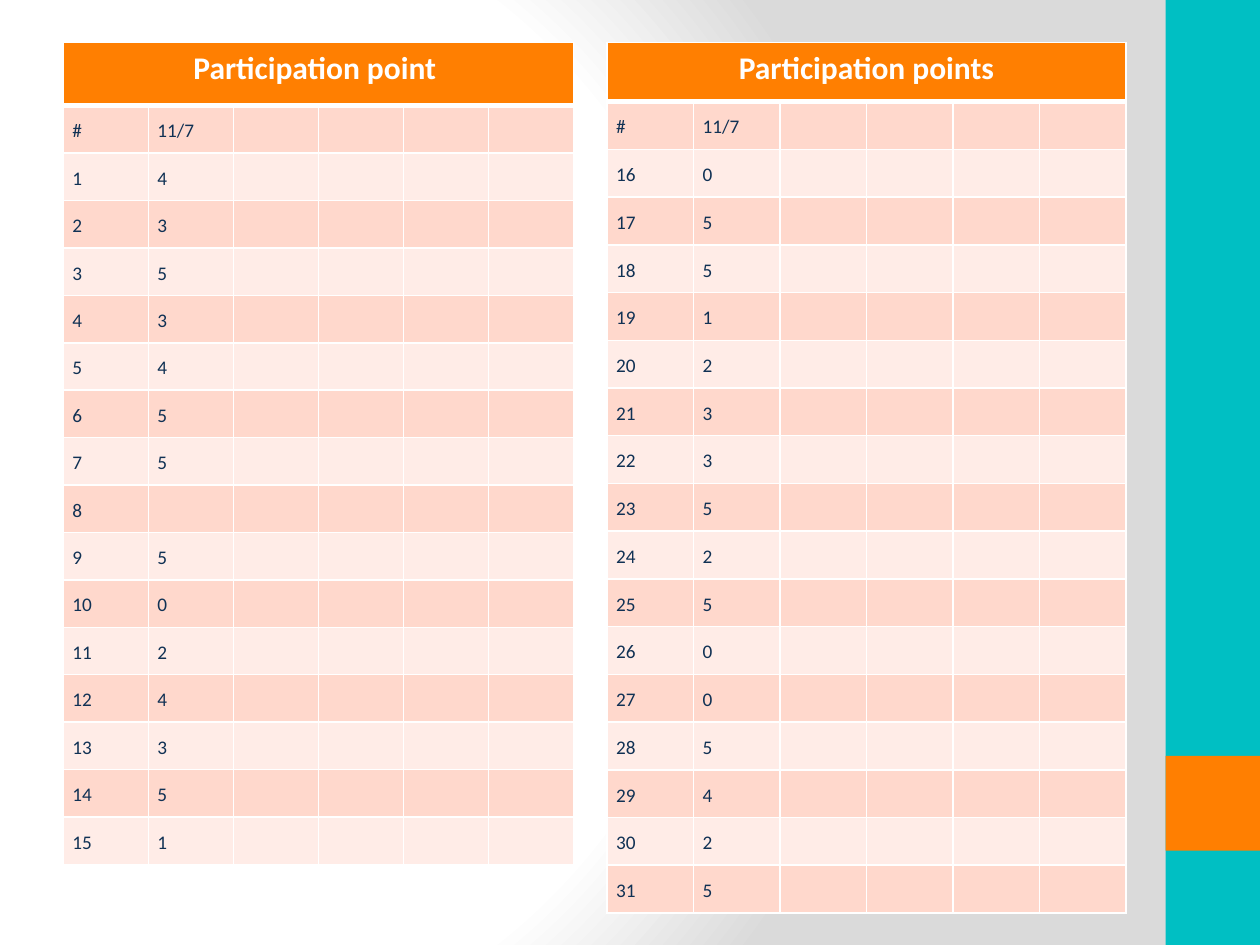
from dataclasses import dataclass

from pptx import Presentation
from pptx.dml.color import RGBColor
from pptx.enum import shapes, text
from pptx.oxml import parse_xml
from pptx.oxml.ns import nsdecls
from pptx.util import Cm, Pt

WHITE = RGBColor(0xFF, 0xFF, 0xFF)
GREY = RGBColor(0xDA, 0xDA, 0xDA)
TEAL = RGBColor(0x00, 0xBF, 0xC3)
ORANGE = RGBColor(0xFF, 0x7F, 0x01)
NAVY = RGBColor(0x10, 0x31, 0x54)
BANDS = (RGBColor(0xFF, 0xD8, 0xCC), RGBColor(0xFF, 0xEC, 0xE7))

COLUMNS = 6
HEADER_FONT = {"name": "Calibri", "size": Pt(18), "bold": True}
BODY_FONT = {"name": "Calibri", "size": Pt(11), "bold": False}
HEADER_CELL = {
    "margin_left": Cm(0.13), "margin_right": Cm(0.13),
    "margin_top": Cm(0.13), "margin_bottom": Cm(0.13),
    "vertical_anchor": text.MSO_ANCHOR.TOP,
}
BODY_CELL = {
    "margin_left": Cm(0.18), "margin_right": Cm(0.18),
    "margin_top": 0, "margin_bottom": 0,
    "vertical_anchor": text.MSO_ANCHOR.MIDDLE,
}


@dataclass(frozen=True)
class Bar:
    top: float
    height: float
    color: RGBColor


@dataclass(frozen=True)
class ScoreSheet:
    title: str
    first_number: int
    points: tuple
    left: float
    width: float
    height: float
    header_height: float


BARS = (Bar(0, 19.05, TEAL), Bar(15.24, 1.91, ORANGE))
SHEETS = (
    ScoreSheet("Participation point ", 1,
               (4, 3, 5, 3, 4, 5, 5, "", 5, 0, 2, 4, 3, 5, 1),
               1.28, 10.28, 16.57, 1.27),
    ScoreSheet("Participation points", 16,
               (0, 5, 5, 1, 2, 3, 3, 5, 2, 5, 0, 0, 5, 4, 2, 5),
               12.24, 10.46, 17.55, 1.19),
)


def apply(target, values: dict) -> None:
    for name, value in values.items():
        setattr(target, name, value)


def set_background(slide) -> None:
    """Fill the slide with a circular white to grey gradient."""
    slide.background.fill.gradient()
    stops = "".join(
        f'<a:gs pos="{position}"><a:srgbClr val="{color}"/></a:gs>'
        for position, color in ((0, WHITE), (75000, WHITE), (100000, GREY)))
    gradient = parse_xml(
        f'<a:gradFill {nsdecls("a")} rotWithShape="1"><a:gsLst>{stops}</a:gsLst>'
        '<a:path path="circle"><a:fillToRect l="20000" t="50000" r="100000" '
        'b="50000"/></a:path></a:gradFill>')
    plain = slide.element.xpath(".//p:bgPr/a:gradFill")[0]
    plain.getparent().replace(plain, gradient)


def draw_bar(slide, bar: Bar) -> None:
    shape = slide.shapes.add_shape(shapes.MSO_SHAPE.RECTANGLE, Cm(23.5),
                                   Cm(bar.top), Cm(1.9), Cm(bar.height))
    shape.shadow.inherit = False
    shape.fill.solid()
    shape.fill.fore_color.rgb = bar.color
    shape.line.fill.background()


def set_borders(cell, top: int = 1, bottom: int = 1) -> None:
    """Draw white borders, with widths in points."""
    widths = {"lnL": 1, "lnR": 1, "lnT": top, "lnB": bottom}
    properties = cell._tc.get_or_add_tcPr()
    for index, (side, width) in enumerate(widths.items()):
        properties.insert(index, parse_xml(
            f'<a:{side} {nsdecls("a")} w="{Pt(width)}"><a:solidFill>'
            f'<a:srgbClr val="{WHITE}"/></a:solidFill></a:{side}>'))


def fill_cell(cell, color: RGBColor, layout: dict) -> None:
    apply(cell, layout)
    cell.fill.solid()
    cell.fill.fore_color.rgb = color


def write(cell, words: str, font: dict, color: RGBColor, paragraph: dict) -> None:
    line = cell.text_frame.paragraphs[0]
    apply(line, paragraph)
    run = line.add_run()
    run.text = words
    apply(run.font, font)
    run.font.color.rgb = color


def draw_sheet(slide, sheet: ScoreSheet) -> None:
    entries = [("#", "11/7"), *enumerate(sheet.points, sheet.first_number)]
    table = slide.shapes.add_table(len(entries) + 1, COLUMNS, Cm(sheet.left),
                                   Cm(0.86), Cm(sheet.width),
                                   Cm(sheet.height)).table
    for column in table.columns:
        column.width = Cm(sheet.width / COLUMNS)
    for row in table.rows:
        row.height = Cm((sheet.height - sheet.header_height) / len(entries))
    table.rows[0].height = Cm(sheet.header_height)

    for cell in table.rows[0].cells:
        fill_cell(cell, ORANGE, HEADER_CELL)
        set_borders(cell, bottom=3)
    header = table.cell(0, 0)
    header.merge(table.cell(0, COLUMNS - 1))
    write(header, sheet.title, HEADER_FONT, WHITE,
          {"alignment": text.PP_ALIGN.CENTER})

    for index, entry in enumerate(entries):
        cells = list(table.rows[index + 1].cells)
        for cell in cells:
            fill_cell(cell, BANDS[index % 2], BODY_CELL)
            set_borders(cell, top=3 if index == 0 else 1)
        for cell, value in zip(cells, entry):
            if value != "":
                write(cell, str(value), BODY_FONT, NAVY, {"line_spacing": 1.15})


def main() -> None:
    presentation = Presentation()
    presentation.slide_width, presentation.slide_height = Cm(25.4), Cm(19.05)
    slide = presentation.slides.add_slide(presentation.slide_layouts[6])
    set_background(slide)
    for bar in BARS:
        draw_bar(slide, bar)
    for sheet in SHEETS:
        draw_sheet(slide, sheet)
    presentation.save("out.pptx")


if __name__ == "__main__":
    main()
